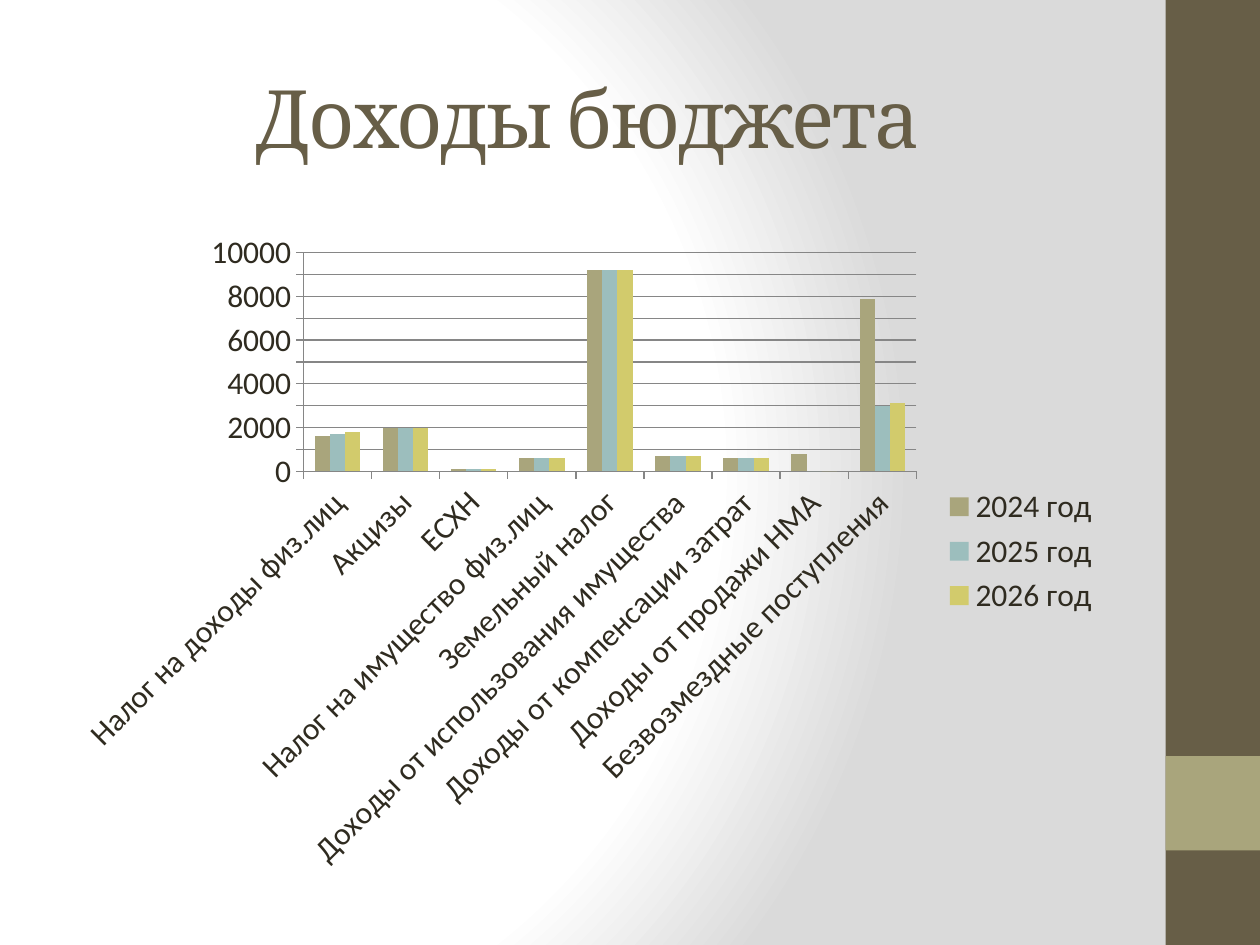
from dataclasses import dataclass

from lxml.etree import SubElement
from pptx import Presentation
from pptx.chart.data import CategoryChartData as ChartData
from pptx.dml.color import RGBColor as RGB
from pptx.enum.chart import XL_CHART_TYPE as ChartType
from pptx.enum.chart import XL_LEGEND_POSITION as LegendPosition
from pptx.enum.chart import XL_TICK_MARK as TickMark
from pptx.enum.shapes import MSO_SHAPE as Shape
from pptx.enum.text import MSO_ANCHOR as Anchor
from pptx.enum.text import PP_ALIGN as Align
from pptx.oxml.ns import qn
from pptx.util import Inches, Pt


@dataclass(frozen=True)
class Theme:
    brown: str = "675E47"
    olive: str = "A9A57C"
    ink: str = "2F2B20"
    grid: str = "868686"
    years: tuple = ("A9A57C", "9CBEBD", "D2CB6C")
    backdrop: tuple = ((0, "FFFFFF"), (75, "FFFFFF"), (100, "DADADA"))
    title_font: str = "Cambria"
    body_font: str = "Calibri"
    title_size: int = 46
    body_size: int = 18


class SlideBuilder:
    def __init__(self, slide, theme):
        self.slide = slide
        self.theme = theme

    def style(self, font, name, size, color):
        font.name = name
        font.size = Pt(size)
        font.color.rgb = RGB.from_string(color)

    def backdrop(self, left, top, right, bottom):
        self.slide.background.fill.gradient()
        gradient = self.slide.element.find(".//" + qn("a:gradFill"))
        for child in list(gradient):
            gradient.remove(child)
        stops = SubElement(gradient, qn("a:gsLst"))
        for percent, color in self.theme.backdrop:
            stop = SubElement(stops, qn("a:gs"), pos=str(percent * 1000))
            SubElement(stop, qn("a:srgbClr"), val=color)
        circle = SubElement(gradient, qn("a:path"), path="circle")
        edges = dict(l=left, t=top, r=right, b=bottom)
        SubElement(circle, qn("a:fillToRect"),
                   {side: str(percent * 1000) for side, percent in edges.items()})

    def band(self, left, top, width, height, color):
        band = self.slide.shapes.add_shape(
            Shape.RECTANGLE, *map(Inches, (left, top, width, height)))
        band.shadow.inherit = False
        band.fill.solid()
        band.fill.fore_color.rgb = RGB.from_string(color)
        band.line.fill.background()

    def title(self, left, top, width, height, wording):
        frame = self.slide.shapes.add_textbox(
            *map(Inches, (left, top, width, height))).text_frame
        frame.word_wrap = True
        frame.vertical_anchor = Anchor.MIDDLE
        heading = frame.paragraphs[0]
        heading.alignment = Align.CENTER
        run = heading.add_run()
        run.text = wording
        self.style(heading.font, self.theme.title_font,
                   self.theme.title_size, self.theme.brown)
        run.font._element.set("spc", "-100")

    def column_chart(self, left, top, width, height, categories, series):
        income = ChartData()
        income.categories = categories
        for year, amounts in series.items():
            income.add_series(year, amounts)
        chart = self.slide.shapes.add_chart(
            ChartType.COLUMN_CLUSTERED,
            *map(Inches, (left, top, width, height)), income).chart
        self.style(chart.font, self.theme.body_font,
                   self.theme.body_size, self.theme.ink)
        chart.has_title = False
        chart.has_legend = True
        chart.legend.position = LegendPosition.RIGHT
        chart.legend.include_in_layout = False

        grid = RGB.from_string(self.theme.grid)
        chart.value_axis.has_major_gridlines = True
        chart.value_axis.major_gridlines.format.line.color.rgb = grid
        for axis in (chart.category_axis, chart.value_axis):
            axis.major_tick_mark = TickMark.OUTSIDE
            axis.minor_tick_mark = TickMark.NONE
            axis.format.line.color.rgb = grid

        plot = chart.plots[0]
        plot.gap_width = 150
        plot.vary_by_categories = False
        for columns, color in zip(plot.series, self.theme.years):
            columns.format.fill.solid()
            columns.format.fill.fore_color.rgb = RGB.from_string(color)
            columns.invert_if_negative = False


SOURCES = (
    "Налог на доходы физ.лиц",
    "Акцизы",
    "ЕСХН",
    "Налог на имущество физ.лиц",
    "Земельный налог",
    "Доходы от использования имущества",
    "Доходы от компенсации затрат",
    "Доходы от продажи НМА",
    "Безвозмездные поступления",
)
INCOME = {
    "2024 год": (1600, 2000, 100, 600, 9200, 700, 600, 800, 7900),
    "2025 год": (1700, 2000, 100, 600, 9200, 700, 600, 0, 3000),
    "2026 год": (1800, 2000, 100, 600, 9200, 700, 600, 0, 3100),
}


def main():
    deck = Presentation()
    deck.slide_width, deck.slide_height = Inches(10), Inches(7.5)
    theme = Theme()
    budget = SlideBuilder(deck.slides.add_slide(deck.slide_layouts[6]), theme)
    budget.backdrop(20, 50, 100, 50)
    budget.band(9.25, 0, 0.75, 7.5, theme.brown)
    budget.band(9.25, 6, 0.75, 0.75, theme.olive)
    budget.title(0.5, 0.3, 8.33, 1.25, "Доходы бюджета")
    budget.column_chart(0.5, 1.75, 8.33, 5.25, SOURCES, INCOME)
    deck.save("out.pptx")


if __name__ == "__main__":
    main()
